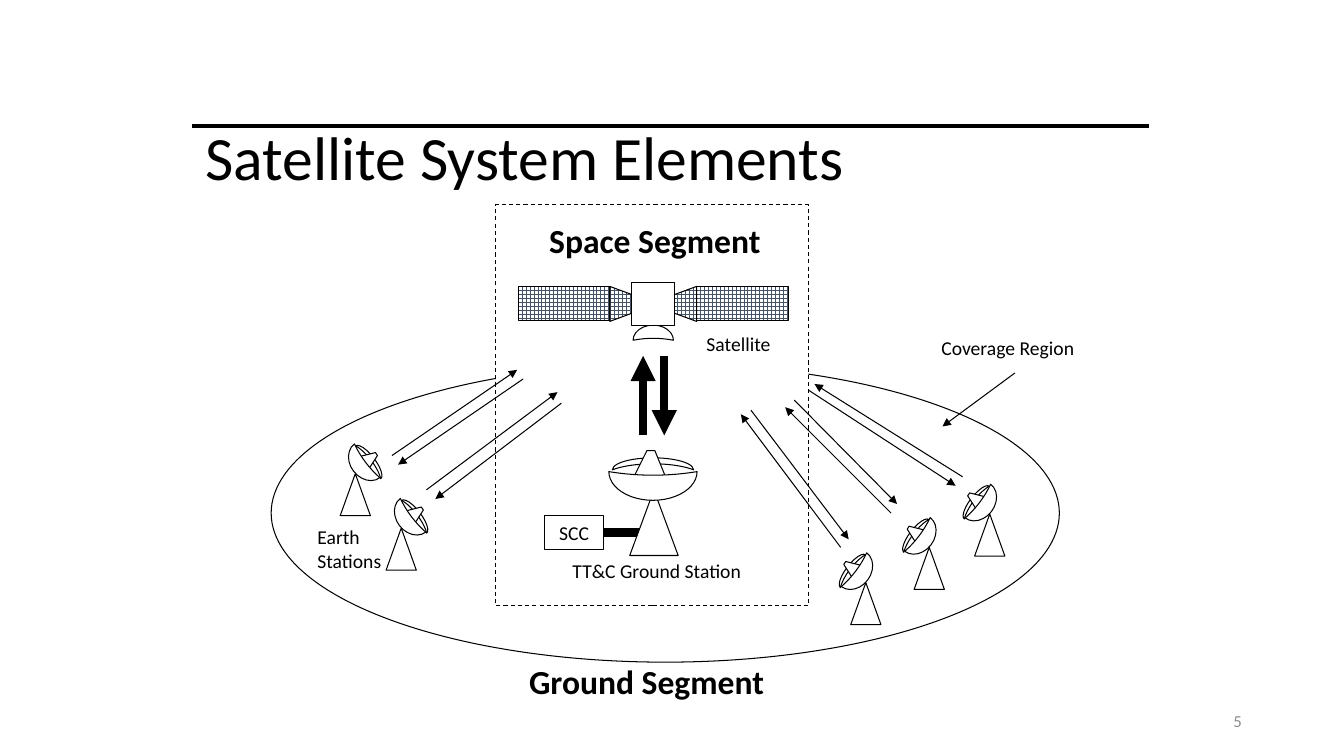
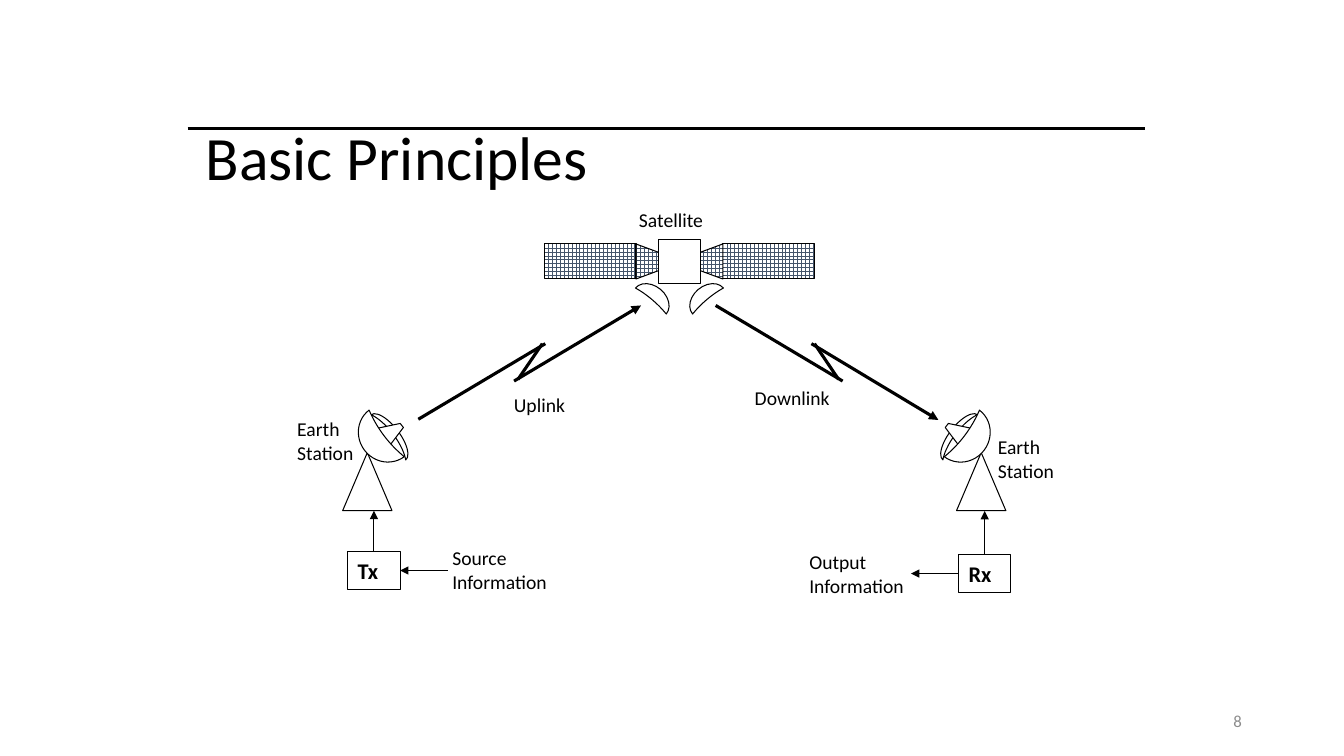
from dataclasses import dataclass

from lxml import etree
from pptx import Presentation
from pptx.dml.color import RGBColor
from pptx.enum.dml import MSO_LINE, MSO_PATTERN
from pptx.enum.shapes import MSO_CONNECTOR, MSO_SHAPE
from pptx.enum.text import MSO_ANCHOR, MSO_AUTO_SIZE, PP_ALIGN
from pptx.oxml.ns import qn
from pptx.util import Pt


@dataclass(frozen=True)
class Theme:
    font: str = "Calibri"
    ink: RGBColor = RGBColor(0, 0, 0)
    paper: RGBColor = RGBColor(0xFF, 0xFF, 0xFF)
    panel: RGBColor = RGBColor(0x44, 0x54, 0x6A)
    muted: RGBColor = RGBColor(0x8C, 0x8C, 0x8C)
    title: int = 44
    segment: int = 24
    unit: int = 16
    label: int = 14
    number: int = 12
    thin: float = 0.75
    bold: float = 2.25
    heavy: float = 6


T = Theme()


def write(tf, text, size=T.label, bold=False, color=T.ink, align=PP_ALIGN.LEFT,
          anchor=MSO_ANCHOR.TOP, spacing=None):
    """Fill a text frame with one formatted paragraph."""
    tf.word_wrap = True
    tf.auto_size = MSO_AUTO_SIZE.NONE
    tf.vertical_anchor = anchor
    p = tf.paragraphs[0]
    p.alignment = align
    p.line_spacing = spacing
    r = p.add_run()
    r.text = text
    r.font.name, r.font.size, r.font.bold = T.font, Pt(size), bold
    r.font.color.rgb = color


def style(sp, width=T.thin, fill=None, grid=False, dash=False, arrow=None, rotation=0):
    """Format a shape or a connector; arrow is headEnd or tailEnd."""
    sp.line.color.rgb = T.ink
    sp.line.width = Pt(width)
    if dash:
        sp.line.dash_style = MSO_LINE.DASH
    pr = sp.element.spPr
    if hasattr(sp, "begin_x"):
        if arrow:
            etree.SubElement(pr.find(qn("a:ln")), qn("a:" + arrow), type="triangle")
        etree.SubElement(pr, qn("a:effectLst"))
        return
    sp.shadow.inherit = False
    sp.rotation = rotation
    if grid:
        sp.fill.patterned()
        sp.fill.pattern = MSO_PATTERN.LARGE_GRID
        sp.fill.fore_color.rgb, sp.fill.back_color.rgb = T.panel, T.paper
    elif fill:
        sp.fill.solid()
        sp.fill.fore_color.rgb = fill
    else:
        sp.fill.background()


# Dish parts relative to the top of the mast: moons are centre x, y, width, height, angle
DISHES = {
    "tilted": dict(mast=(21.6, 30), rim=(11.2, -9.7, 5, 29.5, 142.6),
                   feed=[(7.9, -0.7), (15.8, -13), (14.4, -15.1), (0, -11.5)],
                   bowl=(3.6, -5.6, 12.2, 30.2, 323)),
    "upright": dict(mast=(34.6, 46.8), rim=(-0.7, -18.7, 8.6, 58, 90),
                    feed=[(10.1, -5), (0.7, -28.1), (-5, -28.1), (-15.8, -6.5)],
                    bowl=(-0.7, -2.9, 20.5, 63, 270)),
}

# frames: preset, x, y, w, h, fill, dash
# boxes: text, x, y, w, h, format, links (side, dx, dy, width, arrow)
# lines: x1, y1, x2, y2, width, arrow at the end
# reflectors: x, y from the satellite's centre, angle
# dishes: kind, x, y of the mast top, mirror (1 or -1), x scale, y scale
# labels: text, x, y, w, h, format
CENTRED = dict(align=PP_ALIGN.CENTER)
UNIT = dict(size=T.unit, bold=True)
SEGMENT = dict(size=T.segment, bold=True)
SLIDES = [
    dict(
        title="Satellite System Elements", number="5", rule=(137, 90),
        frames=[(MSO_SHAPE.OVAL, 193.7, 260, 563, 213, None, False),
                (MSO_SHAPE.RECTANGLE, 354.2, 146.2, 223.2, 286.6, T.paper, True)],
        boxes=[("SCC", 388.8, 368, 42.5, 24.5, CENTRED, [(3, 33, 0, T.heavy, None)])],
        lines=[(280, 325.4, 369.4, 264.2, T.thin, True),
               (373.7, 270.7, 284.4, 331.9, T.thin, True),
               (304.6, 349.9, 398.2, 280.1, T.thin, True),
               (401, 288, 311, 356.4, T.thin, True),
               (600.5, 391, 529.2, 295.9, T.thin, True),
               (536.4, 293, 606.2, 385.2, T.thin, True),
               (636.5, 366.5, 560.9, 290.9, T.thin, True),
               (567.4, 285.8, 640.8, 360, T.thin, True),
               (687.6, 340.6, 581.8, 274.3, T.thin, True),
               (577.4, 278.6, 682.6, 347, T.thin, True),
               (725, 266.4, 673.2, 304.6, T.thin, True),
               (459.4, 311, 459.4, 254.2, T.heavy, True),
               (474.5, 254.2, 474.5, 311, T.heavy, True)],
        satellite=(466.6, 217.1), reflectors=[(0, 20.5, 90)],
        dishes=[("tilted", 253.8, 338.4, 1, 1, 1), ("tilted", 286.6, 377.3, 1, 1, 1),
                ("tilted", 618.5, 416.2, -1, 1, 1), ("tilted", 663.8, 391, -1, 1, 1),
                ("tilted", 707, 367.2, -1, 1, 1), ("upright", 467.1, 350, 1, 1, 1)],
        labels=[("Space Segment", 385.2, 153.4, 170.6, 36, SEGMENT),
                ("Ground Segment", 370.8, 468.7, 226, 36, SEGMENT),
                ("Satellite", 497.5, 233.3, 70, 24, {}),
                ("TT&C Ground Station", 401.8, 396, 143.3, 24, {}),
                ("Earth Stations", 219.6, 371.5, 62, 41, {}),
                ("Coverage Region", 665.3, 236.2, 121.7, 24, {})],
    ),
    dict(
        title="Basic Principles", number="8", rule=(134, 92),
        frames=[],
        boxes=[("Tx", 248.4, 393.8, 37.4, 27.4, UNIT,
                [(0, 0, -29, T.thin, "tailEnd"), (3, 34, 0, T.thin, "headEnd")]),
               ("Rx", 684.7, 396, 37.4, 27.4, UNIT,
                [(0, 0, -31, T.thin, "tailEnd"), (1, -34, 0, T.thin, "tailEnd")])],
        lines=[(298.8, 299.5, 389.5, 245.5, T.bold, False),
               (387.4, 245.5, 370, 271, T.bold, False),
               (367.2, 272.2, 457.9, 218.2, T.bold, True),
               (511.2, 218.2, 601.9, 272.2, T.bold, False),
               (599, 271, 581.8, 245.5, T.bold, False),
               (579.6, 245.5, 670.3, 300, T.bold, True)],
        satellite=(485.3, 186.8), reflectors=[(-16.9, 24.1, 130.2), (16.9, 24.1, 49.8)],
        dishes=[("tilted", 262.4, 323.3, 1, 1.63, 1.38),
                ("tilted", 700.9, 323.3, -1, 1.63, 1.38)],
        labels=[("Satellite", 449.3, 144.7, 70, 24, {}),
                ("Uplink", 360, 277.2, 62, 24, {}),
                ("Downlink", 532, 272.2, 74, 24, {}),
                ("Earth Station", 205.2, 294.5, 62, 41, {}),
                ("Earth Station", 705.6, 307.4, 62, 41, {}),
                ("Source Information", 316, 386.6, 83, 41, {}),
                ("Output Information", 571, 389.5, 83, 41, {})],
    ),
]

prs = Presentation()
prs.slide_width, prs.slide_height = Pt(960), Pt(540)

for page in SLIDES:
    s = prs.slides.add_slide(prs.slide_layouts[5])
    shapes = s.shapes

    # Title, rule and slide number
    title = shapes.title
    title.left, title.top, title.width, title.height = Pt(139.7), Pt(85), Pt(612), Pt(59.8)
    write(title.text_frame, page["title"], size=T.title, anchor=MSO_ANCHOR.MIDDLE, spacing=0.9)
    x, y = page["rule"]
    rule = shapes.add_connector(MSO_CONNECTOR.STRAIGHT, Pt(x), Pt(y), Pt(x + 684), Pt(y))
    style(rule, width=T.bold)
    number = shapes.add_textbox(Pt(678.2), Pt(500.4), Pt(216), Pt(28.8))
    write(number.text_frame, page["number"], size=T.number, color=T.muted,
          align=PP_ALIGN.RIGHT, anchor=MSO_ANCHOR.MIDDLE)

    # Coverage region and space segment
    for preset, x, y, w, h, fill, dash in page["frames"]:
        style(shapes.add_shape(preset, Pt(x), Pt(y), Pt(w), Pt(h)), fill=fill, dash=dash)

    # Equipment boxes with their connectors
    for text, x, y, w, h, fmt, links in page["boxes"]:
        box = shapes.add_shape(MSO_SHAPE.RECTANGLE, Pt(x), Pt(y), Pt(w), Pt(h))
        style(box, fill=T.paper)
        write(box.text_frame, text, anchor=MSO_ANCHOR.MIDDLE, **fmt)
        sides = [(x + w / 2, y), (x, y + h / 2), (x + w / 2, y + h), (x + w, y + h / 2)]
        for side, dx, dy, width, arrow in links:
            x1, y1 = sides[side]
            link = shapes.add_connector(MSO_CONNECTOR.STRAIGHT, Pt(x1), Pt(y1),
                                        Pt(x1 + dx), Pt(y1 + dy))
            link.begin_connect(box, side)
            style(link, width=width, arrow=arrow)

    # Radio links and pointers
    for x1, y1, x2, y2, width, arrow in page["lines"]:
        line = shapes.add_connector(MSO_CONNECTOR.STRAIGHT, Pt(x1), Pt(y1), Pt(x2), Pt(y2))
        style(line, width=width, arrow="tailEnd" if arrow else None)

    # Satellite: panels and necks on both sides, reflectors, body
    cx, cy = page["satellite"]
    for side in (-1, 1):
        panel = shapes.add_shape(MSO_SHAPE.RECTANGLE, Pt(cx + side * 63.75 - 32.75),
                                 Pt(cy - 12.5), Pt(65.5), Pt(24.5))
        style(panel, grid=True)
        outer, inner = cx + side * 31, cx + side * 13.7
        fb = shapes.build_freeform(Pt(outer), Pt(cy + 12.5))
        fb.add_line_segments([(Pt(inner), Pt(cy + 6.1)), (Pt(inner), Pt(cy - 6.1)),
                              (Pt(outer), Pt(cy - 12.5))])
        style(fb.convert_to_shape(), grid=True)
    for dx, dy, angle in page["reflectors"]:
        moon = shapes.add_shape(MSO_SHAPE.MOON, Pt(cx + dx - 5.4), Pt(cy + dy - 14.4),
                                Pt(10.8), Pt(28.8))
        moon.adjustments[0] = 0.875
        style(moon, fill=T.paper, rotation=angle)
    body = shapes.add_shape(MSO_SHAPE.RECTANGLE, Pt(cx - 15.2), Pt(cy - 15.5), Pt(30.4), Pt(31))
    style(body, fill=T.paper)

    # Dishes: mast, rim, feed, bowl
    for kind, x, y, mirror, sx, sy in page["dishes"]:
        dish = DISHES[kind]
        w, h = dish["mast"][0] * sx, dish["mast"][1] * sy
        mast = shapes.add_shape(MSO_SHAPE.ISOSCELES_TRIANGLE, Pt(x - w / 2), Pt(y), Pt(w), Pt(h))
        style(mast, fill=T.paper)
        for part, thickness in (("rim", 0.5), ("feed", None), ("bowl", 0.875)):
            if part == "feed":
                points = [(Pt(x + mirror * dx * sx), Pt(y + dy * sy)) for dx, dy in dish[part]]
                fb = shapes.build_freeform(*points[0])
                fb.add_line_segments(points[1:])
                style(fb.convert_to_shape(), fill=T.paper)
                continue
            dx, dy, w, h, angle = dish[part]
            w, h = w * sx, h * sy
            moon = shapes.add_shape(MSO_SHAPE.MOON, Pt(x + mirror * dx * sx - w / 2),
                                    Pt(y + dy * sy - h / 2), Pt(w), Pt(h))
            moon.adjustments[0] = thickness
            style(moon, fill=T.paper, rotation=angle if mirror == 1 else 180 - angle)

    # Labels
    for text, x, y, w, h, fmt in page["labels"]:
        label = shapes.add_textbox(Pt(x), Pt(y), Pt(w), Pt(h))
        write(label.text_frame, text, **fmt)

prs.save("out.pptx")
